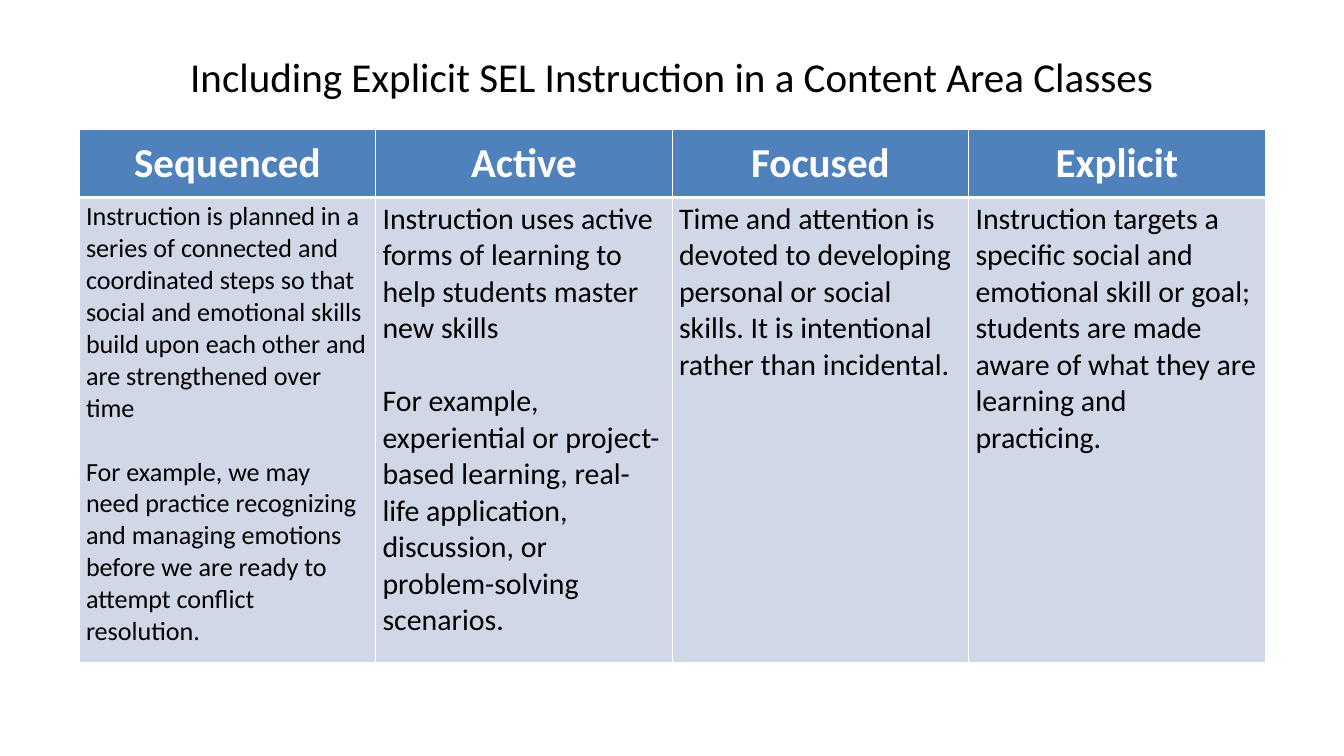
from lxml import etree
from pptx import Presentation
from pptx import util as u
from pptx.dml.color import RGBColor
from pptx.enum import text as t
from pptx.oxml import ns

TITLE = "Including Explicit SEL Instruction in a Content Area Classes"
# heading, body type size, paragraphs
COLS = [
    ("Sequenced", 28, [
        "Instruction is planned in a series of connected and coordinated steps so that "
        "social and emotional skills build upon each other and are strengthened over time",
        "For example, we may need practice recognizing and managing emotions "
        "before we are ready to attempt conflict resolution."]),
    ("Active", 32, [
        "Instruction uses active forms of learning to help students master new skills",
        "For example, experiential or project-based learning, real-life application, "
        "discussion, or problem-solving scenarios."]),
    ("Focused", 32, [
        "Time and attention is devoted to developing personal or social skills. "
        "It is intentional rather than incidental."]),
    ("Explicit", 32, [
        "Instruction targets a specific social and emotional skill or goal; "
        "students are made aware of what they are learning and practicing."]),
]
THEME = dict(font="Calibri", big=44, ink="000000", white="FFFFFF",
             head="4F81BD", body="D0D8E8", line=1.22)
LEFT, TOP, WIDTH = 1.18, 1.93, 17.65
ROWS = [1.01, 6.92]
THIN, THICK = 1, 3


def write(frame, paras, size, color=THEME["ink"], bold=False, align=t.PP_ALIGN.LEFT):
    """Fill a text frame, leaving one line's height between paragraphs."""
    frame.word_wrap = True
    for i, words in enumerate(paras):
        para = frame.add_paragraph() if i else frame.paragraphs[0]
        para.alignment = align
        if i:
            para.space_before = u.Pt(round(size * THEME["line"]))
        run = para.add_run()
        run.text = words
        font = run.font
        font.name, font.size, font.bold = THEME["font"], u.Pt(size), bold
        font.color.rgb = RGBColor.from_string(color)


def dress(cell, fill, **edges):
    """Set a cell's fill and white borders; edges gives widths that are not thin."""
    props = cell._tc.get_or_add_tcPr()
    for side in "LRTB":
        width = u.Pt(edges.get(side, THIN))
        line = etree.SubElement(props, ns.qn(f"a:ln{side}"), w=str(width))
        paint = etree.SubElement(line, ns.qn("a:solidFill"))
        etree.SubElement(paint, ns.qn("a:srgbClr"), val=THEME["white"])
    cell.fill.solid()
    cell.fill.fore_color.rgb = RGBColor.from_string(fill)


def main():
    deck = Presentation()
    deck.slide_width, deck.slide_height = u.Inches(20), u.Inches(11.25)
    slide = deck.slides.add_slide(deck.slide_layouts[6])

    title = slide.shapes.add_textbox(u.Inches(2.33), u.Inches(0.5),
                                     u.Inches(15.35), u.Inches(1.25)).text_frame
    title.vertical_anchor = t.MSO_ANCHOR.MIDDLE
    write(title, [TITLE], THEME["big"], align=t.PP_ALIGN.CENTER)

    grid = slide.shapes.add_table(len(ROWS), len(COLS), u.Inches(LEFT), u.Inches(TOP),
                                  u.Inches(WIDTH), u.Inches(sum(ROWS))).table
    for row, height in zip(grid.rows, ROWS):
        row.height = u.Inches(height)
    for c, (name, size, paras) in enumerate(COLS):
        grid.columns[c].width = u.Inches(WIDTH / len(COLS))
        head, body = grid.cell(0, c), grid.cell(1, c)
        dress(head, THEME["head"], B=THICK)
        dress(body, THEME["body"], T=THICK)
        head.vertical_anchor = t.MSO_ANCHOR.MIDDLE
        write(head.text_frame, [name], THEME["big"], THEME["white"],
              bold=True, align=t.PP_ALIGN.CENTER)
        write(body.text_frame, paras, size)

    deck.save("out.pptx")


if __name__ == "__main__":
    main()
